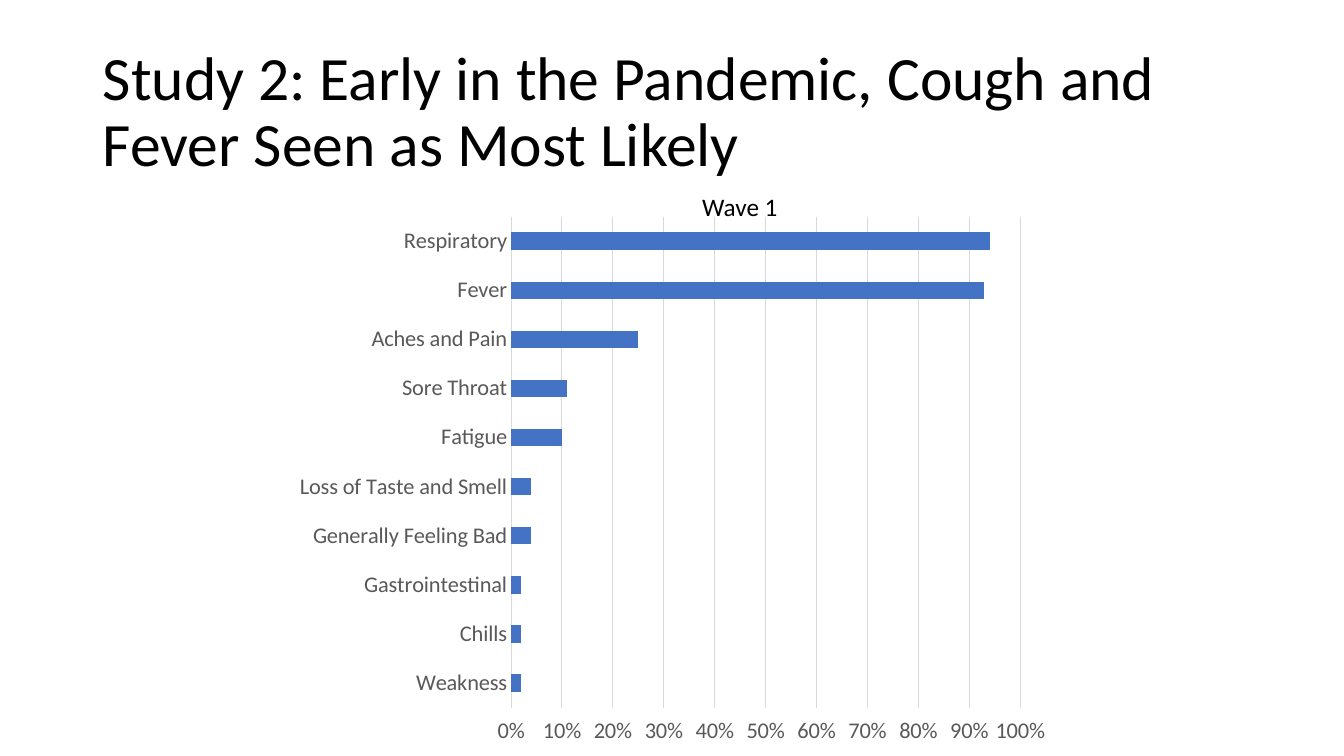
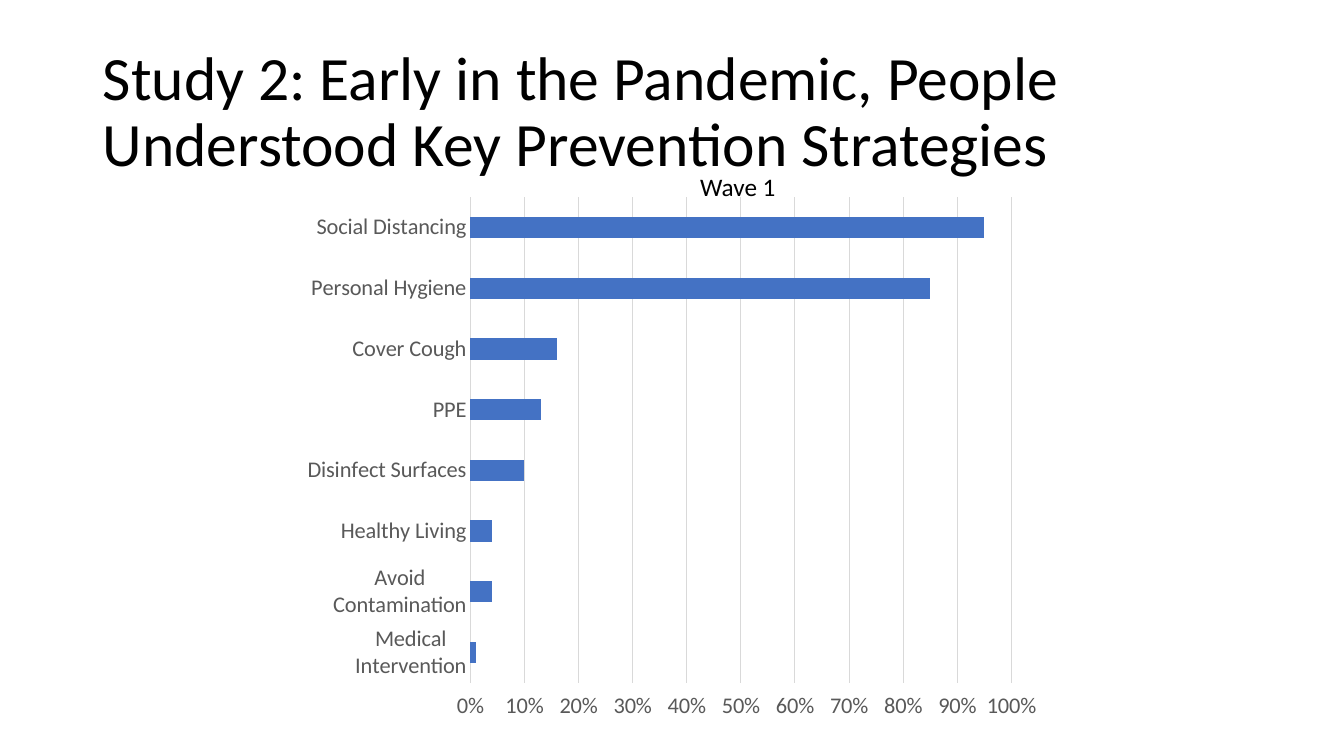
from dataclasses import dataclass
from pptx import Presentation
from pptx.chart.data import CategoryChartData
from pptx.dml.color import RGBColor
from pptx.enum.chart import XL_CHART_TYPE, XL_TICK_LABEL_POSITION, XL_TICK_MARK
from pptx.enum.text import MSO_ANCHOR, MSO_AUTO_SIZE, PP_ALIGN
from pptx.util import Pt

BAR = XL_CHART_TYPE.BAR_CLUSTERED
NO_TICK = XL_TICK_MARK.NONE
FAR_END = XL_TICK_LABEL_POSITION.HIGH
MIDDLE = MSO_ANCHOR.MIDDLE
GROW, FIXED = MSO_AUTO_SIZE.SHAPE_TO_FIT_TEXT, MSO_AUTO_SIZE.NONE
LEFT, CENTER = PP_ALIGN.LEFT, PP_ALIGN.CENTER

SLIDES = [
    {
        "title": "Study 2: Early in the Pandemic, Cough and Fever Seen as Most Likely",
        "chart": (203.04, 146.88, 554.4, 393.12),
        "label": "Wave 1",
        "place": (452.88, 133.2, 151.2, 28.8),
        "bars": [
            ("Respiratory", 0.94),
            ("Fever", 0.93),
            ("Aches and Pain", 0.25),
            ("Sore Throat", 0.11),
            ("Fatigue", 0.10),
            ("Loss of Taste and Smell", 0.04),
            ("Generally Feeling Bad", 0.04),
            ("Gastrointestinal", 0.02),
            ("Chills", 0.02),
            ("Weakness", 0.02),
        ],
    },
    {
        "title": "Study 2: Early in the Pandemic, People Understood Key Prevention Strategies",
        "chart": (208.8, 133.2, 542.16, 388.8),
        "label": "Wave 1",
        "place": (451.44, 118.8, 151.2, 28.8),
        "bars": [
            ("Social Distancing", 0.95),
            ("Personal Hygiene", 0.85),
            ("Cover Cough", 0.16),
            ("PPE", 0.13),
            ("Disinfect Surfaces", 0.10),
            ("Healthy Living", 0.04),
            ("Avoid Contamination", 0.04),
            ("Medical Intervention", 0.01),
        ],
    },
]
TITLE_BOX = (66.24, 28.8, 828, 104.4)


@dataclass(frozen=True)
class Theme:
    face: str = "Calibri"
    ink: str = "000000"
    gray: str = "595959"
    rule: str = "D9D9D9"
    blue: str = "4472C4"
    title: float = 44
    label: float = 18
    axis: float = 16
    line: float = 0.75


THEME = Theme()


def color(code):
    return RGBColor.from_string(code)


def points(box):
    return [Pt(side) for side in box]


def style(font, size, code):
    font.name = THEME.face
    font.size = Pt(size)
    font.color.rgb = color(code)


def draw_line(line):
    line.color.rgb = color(THEME.rule)
    line.width = Pt(THEME.line)


def write(frame, text, size, align):
    frame.text = text
    frame.word_wrap = True
    para = frame.paragraphs[0]
    para.alignment = align
    style(para.runs[0].font, size, THEME.ink)
    return para


def add_title(slide, text):
    title = slide.shapes.title
    title.left, title.top, title.width, title.height = points(TITLE_BOX)
    frame = title.text_frame
    para = write(frame, text, THEME.title, LEFT)
    para.line_spacing = 0.9
    frame.vertical_anchor = MIDDLE
    frame.auto_size = FIXED


def add_bars(slide, bars, box):
    data = CategoryChartData(number_format="0%")
    names, values = zip(*bars)
    data.categories = names
    data.add_series("Series 1", values)
    chart = slide.shapes.add_chart(BAR, *points(box), data).chart
    chart.has_legend = False
    chart.has_title = False
    style(chart.font, THEME.axis, THEME.ink)

    plot = chart.plots[0]
    plot.gap_width = 182
    plot.vary_by_categories = False
    fill = plot.series[0].format.fill
    fill.solid()
    fill.fore_color.rgb = color(THEME.blue)

    names_axis, scale = chart.category_axis, chart.value_axis
    for axis in (names_axis, scale):
        axis.major_tick_mark = NO_TICK
        axis.minor_tick_mark = NO_TICK
        style(axis.tick_labels.font, THEME.axis, THEME.gray)
    names_axis.reverse_order = True
    names_axis.has_major_gridlines = False
    draw_line(names_axis.format.line)

    scale.minimum_scale, scale.maximum_scale = 0, 1
    scale.major_unit = 0.1
    scale.has_major_gridlines = True
    draw_line(scale.major_gridlines.format.line)
    scale.format.line.fill.background()
    scale.tick_label_position = FAR_END
    scale.tick_labels.number_format = "0%"
    scale.tick_labels.number_format_is_linked = False


def add_label(slide, text, box):
    frame = slide.shapes.add_textbox(*points(box)).text_frame
    write(frame, text, THEME.label, CENTER)
    frame.auto_size = GROW


deck = Presentation()
deck.slide_width, deck.slide_height = Pt(960), Pt(540)
layout = deck.slide_layouts[5]
for page in SLIDES:
    slide = deck.slides.add_slide(layout)
    add_title(slide, page["title"])
    add_bars(slide, page["bars"], page["chart"])
    add_label(slide, page["label"], page["place"])
deck.save("out.pptx")
